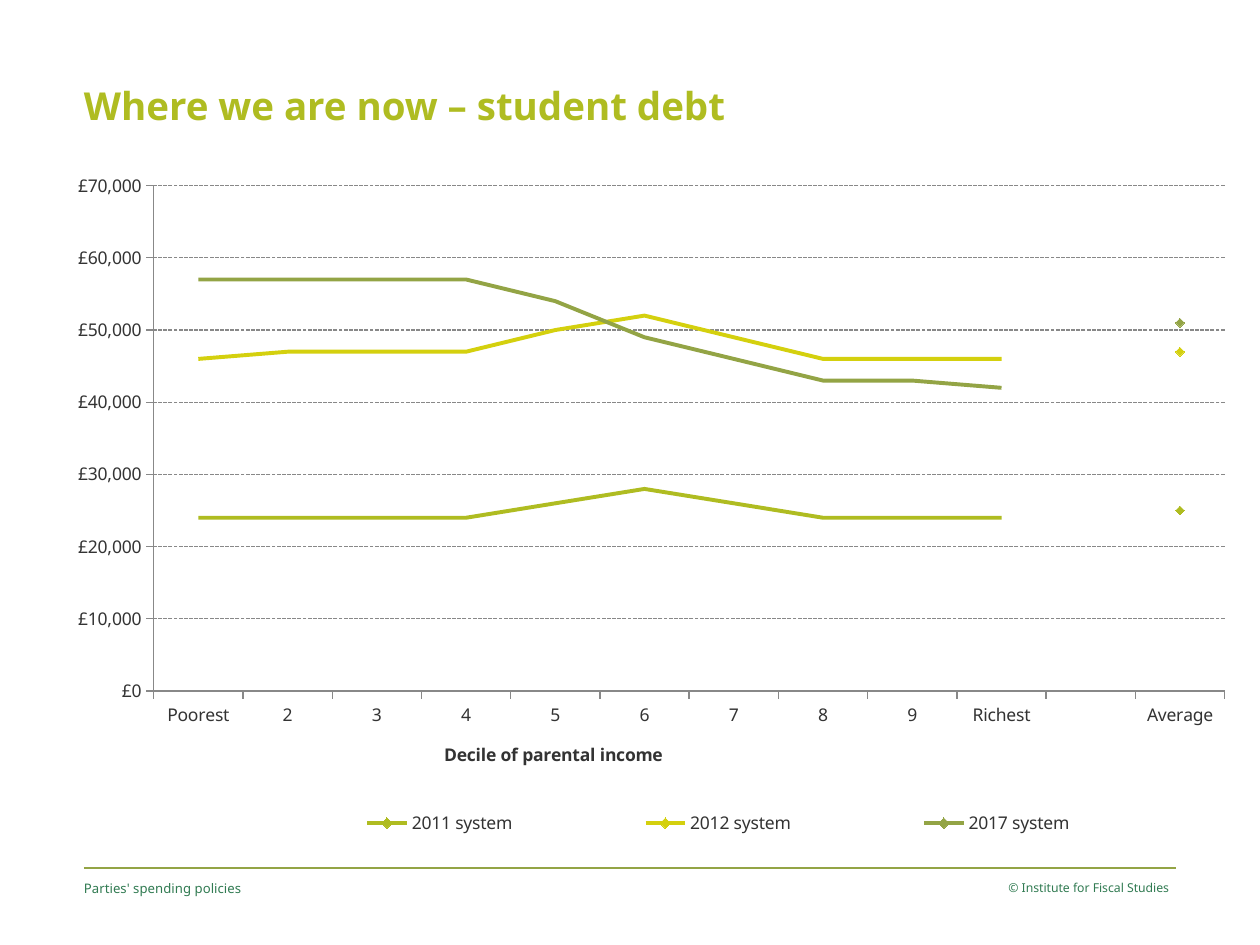
import pptx
import pptx.chart.data
import pptx.dml.color
import pptx.enum.chart
import pptx.enum.dml
import pptx.enum.shapes
import pptx.enum.text
import pptx.oxml
import pptx.oxml.ns
import pptx.util

FONT = "Noto Sans"
LIME, YELLOW, OLIVE = "AFBC21", "D4D00E", "93A445"
FOOTER_GREEN, TEXT_GREY, AXIS_GREY = "317B52", "333333", "888888"

CATEGORIES = ["Poorest", "2", "3", "4", "5", "6", "7", "8", "9", "Richest", "", "Average"]
SYSTEMS = [  # name, colour, debt by decile in £000, average in £000
    ("2011 system", LIME, [24, 24, 24, 24, 26, 28, 26, 24, 24, 24], 25),
    ("2012 system", YELLOW, [46, 47, 47, 47, 50, 52, 49, 46, 46, 46], 47),
    ("2017 system", OLIVE, [57, 57, 57, 57, 54, 49, 46, 43, 43, 42], 51),
]


def px(length):
    return pptx.util.Emu(round(length * 914400 / 126))


def color(value):
    return pptx.dml.color.RGBColor.from_string(value)


def style_font(font, size, value, bold=False):
    font.name = FONT
    font.size = pptx.util.Pt(size)
    font.bold = bold
    font.color.rgb = color(value)


def style_line(line, value, width):
    line.color.rgb = color(value)
    line.width = pptx.util.Pt(width)


def fill_text(shape, text, size, value, bold=False, align=pptx.enum.text.PP_ALIGN.LEFT):
    frame = shape.text_frame
    frame.word_wrap = True
    frame.margin_left = frame.margin_right = frame.margin_top = frame.margin_bottom = 0
    frame.vertical_anchor = pptx.enum.text.MSO_ANCHOR.TOP
    paragraph = frame.paragraphs[0]
    paragraph.text = text
    paragraph.alignment = align
    style_font(paragraph.font, size, value, bold)


def chart_element(body):
    namespace = pptx.oxml.ns.nsdecls("c")
    return pptx.oxml.parse_xml(body.replace("<c:", "<c:", 1).replace(">", f" {namespace}>", 1))


def set_layout(parent, index, inner=False, **fractions):
    """Place a chart part by fractions of the chart area."""
    for old in parent.findall(pptx.oxml.ns.qn("c:layout")):
        parent.remove(old)
    target = '<c:layoutTarget val="inner"/>' if inner else ""
    modes = "".join(f'<c:{key}Mode val="edge"/>' for key in fractions if key in "xy")
    values = "".join(f'<c:{key} val="{value}"/>' for key, value in fractions.items())
    parent.insert(index, chart_element(
        f"<c:layout><c:manualLayout>{target}{modes}{values}</c:manualLayout></c:layout>"))


def add_title(slide, left, top, width, height):
    title = slide.shapes.title
    title.left, title.top, title.width, title.height = map(px, (left, top, width, height))
    fill_text(title, "Where we are now – student debt", 22, LIME, bold=True)


def add_footer(slide, left, top, width):
    rule = slide.shapes.add_connector(pptx.enum.shapes.MSO_CONNECTOR.STRAIGHT,
                                      px(left), px(top), px(left + width), px(top))
    style_line(rule.line, OLIVE, 0.75)
    rule._element.spPr.append(
        pptx.oxml.parse_xml(f"<a:effectLst {pptx.oxml.ns.nsdecls('a')}/>"))
    align = pptx.enum.text.PP_ALIGN
    notes = [
        ("Parties' spending policies", 7.5, 0, 400, align.LEFT),
        ("© Institute for Fiscal Studies", 7, width - 218, 211, align.RIGHT),
    ]
    for text, size, offset, box_width, alignment in notes:
        box = slide.shapes.add_textbox(px(left + offset), px(top + 12), px(box_width), px(50))
        fill_text(box, text, size, FOOTER_GREEN, align=alignment)


def debt_data():
    data = pptx.chart.data.CategoryChartData()
    data.categories = CATEGORIES
    for number, (_, _, deciles, _) in enumerate(SYSTEMS, 1):
        data.add_series(f"Series {number}", [value * 1000 for value in deciles] + [None] * 2)
    for name, _, _, average in SYSTEMS:
        data.add_series(name, [None] * 11 + [average * 1000])
    return data


def style_axes(chart):
    for axis in (chart.category_axis, chart.value_axis):
        axis.major_tick_mark = pptx.enum.chart.XL_TICK_MARK.OUTSIDE
        axis.minor_tick_mark = pptx.enum.chart.XL_TICK_MARK.NONE
        style_line(axis.format.line, AXIS_GREY, 0.75)
        style_font(axis.tick_labels.font, 10, TEXT_GREY)

    values = chart.value_axis
    values.minimum_scale, values.maximum_scale, values.major_unit = 0, 70000, 10000
    values.tick_labels.number_format = '"£"#,##0'
    values.tick_labels.number_format_is_linked = False
    values.has_major_gridlines = True
    gridline = values.major_gridlines.format.line
    style_line(gridline, AXIS_GREY, 0.75)
    gridline.dash_style = pptx.enum.dml.MSO_LINE.SQUARE_DOT

    categories = chart.category_axis
    categories.tick_label_position = pptx.enum.chart.XL_TICK_LABEL_POSITION.LOW
    title = categories.axis_title
    paragraph = title.text_frame.paragraphs[0]
    paragraph.text = "Decile of parental income"
    style_font(paragraph.font, 10, TEXT_GREY, bold=True)
    set_layout(title._element, 1, x=0.35, y=0.83)


def style_series(chart):
    for index, series in enumerate(chart.plots[0].series):
        value = SYSTEMS[index % len(SYSTEMS)][1]
        series.smooth = False
        style_line(series.format.line, value, 2.25)
        if index < len(SYSTEMS):
            series.marker.style = pptx.enum.chart.XL_MARKER_STYLE.NONE
            continue
        series.marker.style = pptx.enum.chart.XL_MARKER_STYLE.DIAMOND
        series.marker.size = 5
        series.marker.format.fill.solid()
        series.marker.format.fill.fore_color.rgb = color(value)
        style_line(series.marker.format.line, value, 0.75)


def add_legend(chart):
    """Show the legend with only the named systems in it."""
    chart.has_legend = True
    legend = chart.legend
    legend.position = pptx.enum.chart.XL_LEGEND_POSITION.BOTTOM
    legend.include_in_layout = False
    style_font(legend.font, 10, TEXT_GREY)
    hidden = len(SYSTEMS)
    for index in range(hidden):
        legend._element.insert(index + 1, chart_element(
            f'<c:legendEntry><c:idx val="{index}"/><c:delete val="1"/></c:legendEntry>'))
    set_layout(legend._element, hidden + 1, x=0.19, y=0.92, w=0.76, h=0.06)


def add_debt_chart(slide, left, top, width, height):
    frame = slide.shapes.add_chart(pptx.enum.chart.XL_CHART_TYPE.LINE_MARKERS,
                                   px(left), px(top), px(width), px(height), debt_data())
    chart = frame.chart
    chart.has_title = False
    style_font(chart.font, 10, TEXT_GREY)
    chart.plots[0].vary_by_categories = False
    style_axes(chart)
    style_series(chart)
    add_legend(chart)
    plot_area = chart._chartSpace.chart.plotArea
    set_layout(plot_area, 0, inner=True, x=0.122, y=0.057, w=0.85, h=0.708)


def main():
    presentation = pptx.Presentation()
    presentation.slide_width, presentation.slide_height = px(1260), px(945)
    slide = presentation.slides.add_slide(presentation.slide_layouts[5])
    add_title(slide, 84, 82, 904, 55)
    add_footer(slide, 84, 868, 1092)
    add_debt_chart(slide, 0, 145, 1260, 714)
    presentation.save("out.pptx")


if __name__ == "__main__":
    main()
